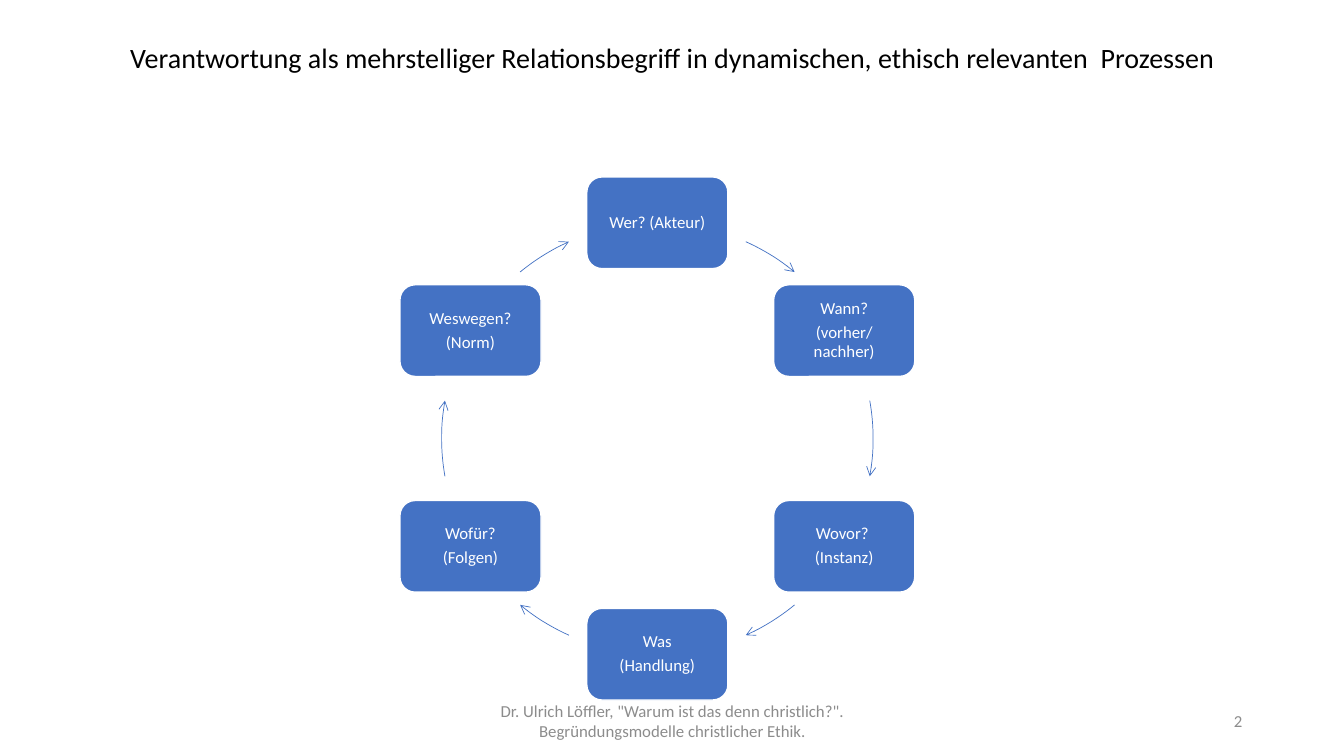
from dataclasses import dataclass
from math import cos, radians, sin

from lxml import etree
from pptx import Presentation
from pptx.dml.color import RGBColor
from pptx.enum.shapes import MSO_SHAPE
from pptx.enum.text import MSO_ANCHOR, PP_ALIGN
from pptx.oxml.ns import qn
from pptx.util import Inches, Pt

ARC = MSO_SHAPE.ARC
ROUNDED = MSO_SHAPE.ROUNDED_RECTANGLE
TOP = MSO_ANCHOR.TOP
MIDDLE = MSO_ANCHOR.MIDDLE
CENTER = PP_ALIGN.CENTER
RIGHT = PP_ALIGN.RIGHT


@dataclass(frozen=True)
class Theme:
    font: str = "Calibri"
    accent: RGBColor = RGBColor(0x44, 0x72, 0xC4)
    white: RGBColor = RGBColor(0xFF, 0xFF, 0xFF)
    black: RGBColor = RGBColor(0, 0, 0)
    gray: RGBColor = RGBColor(0x8C, 0x8C, 0x8C)
    title_size: int = 20
    body_size: int = 12


CENTER_X, CENTER_Y, RADIUS = 6.52, 4.35, 2.14
BOX_WIDTH, BOX_HEIGHT = 1.4, 0.91
STEPS = [
    ("Wer? (Akteur)", -65.8, -50.5),
    ("Wann?\n(vorher/nachher)", -10.1, 10.1),
    ("Wovor? \n(Instanz)", 50.5, 65.8),
    ("Was\n(Handlung)", 114.2, 129.5),
    ("Wofür?\n(Folgen)", 169.9, -169.9),
    ("Weswegen?\n(Norm)", -129.5, -114.2),
]


class SlideBuilder:
    def __init__(self, slide, theme):
        self.slide = slide
        self.theme = theme

    def set_text(self, frame, text, size, color, align, spacing=1.0, after=0):
        frame.word_wrap = True
        frame.text = text
        for para in frame.paragraphs:
            para.alignment = align
            para.line_spacing = spacing
            para.space_after = Pt(after)
            for span in para.runs:
                span.font.name = self.theme.font
                span.font.size = Pt(size)
                span.font.color.rgb = color

    def text_box(self, left, top, width, height, text, size, color, align, anchor=MIDDLE):
        box = self.slide.shapes.add_textbox(
            Inches(left), Inches(top), Inches(width), Inches(height))
        frame = box.text_frame
        frame.vertical_anchor = anchor
        if anchor == TOP:
            frame.margin_top = 0
        self.set_text(frame, text, size, color, align)

    def step_box(self, center_x, center_y, text):
        box = self.slide.shapes.add_shape(
            ROUNDED, Inches(center_x - BOX_WIDTH / 2), Inches(center_y - BOX_HEIGHT / 2),
            Inches(BOX_WIDTH), Inches(BOX_HEIGHT))
        box.shadow.inherit = False
        box.fill.solid()
        box.fill.fore_color.rgb = self.theme.accent
        box.line.color.rgb = self.theme.white
        box.line.width = Pt(1)
        frame = box.text_frame
        frame.vertical_anchor = MIDDLE
        frame.margin_left = frame.margin_right = Inches(0.09)
        frame.margin_top = frame.margin_bottom = Inches(0.09)
        self.set_text(frame, text, self.theme.body_size, self.theme.white, CENTER, 0.9, 4.2)

    def arc_arrow(self, start, end):
        arc = self.slide.shapes.add_shape(
            ARC, Inches(CENTER_X - RADIUS), Inches(CENTER_Y - RADIUS),
            Inches(2 * RADIUS), Inches(2 * RADIUS))
        arc.shadow.inherit = False
        arc.fill.background()
        arc.adjustments[0] = start % 360 * 0.6
        arc.adjustments[1] = end % 360 * 0.6
        arc.line.color.rgb = self.theme.accent
        arc.line.width = Pt(0.5)
        line = arc.element.spPr.find(qn("a:ln"))
        etree.SubElement(line, qn("a:tailEnd"), type="arrow")


def main():
    deck = Presentation()
    deck.slide_width, deck.slide_height = Inches(13.33), Inches(7.5)
    page = deck.slides.add_slide(deck.slide_layouts[6])
    theme = Theme()
    builder = SlideBuilder(page, theme)
    builder.text_box(
        0.92, 0.4, 11.5, 0.64,
        "Verantwortung als mehrstelliger Relationsbegriff in dynamischen, "
        "ethisch relevanten  Prozessen",
        theme.title_size, theme.black, CENTER, TOP)
    for index, (text, start, end) in enumerate(STEPS):
        angle = radians(index * 360 / len(STEPS) - 90)
        builder.step_box(CENTER_X + RADIUS * cos(angle), CENTER_Y + RADIUS * sin(angle), text)
        builder.arc_arrow(start, end)
    builder.text_box(
        4.42, 6.95, 4.5, 0.4,
        "Dr. Ulrich Löffler, \"Warum ist das denn christlich?\". "
        "Begründungsmodelle christlicher Ethik.",
        theme.body_size, theme.gray, CENTER)
    builder.text_box(9.42, 6.95, 3, 0.4, "2", theme.body_size, theme.gray, RIGHT)
    deck.save("out.pptx")


if __name__ == "__main__":
    main()
